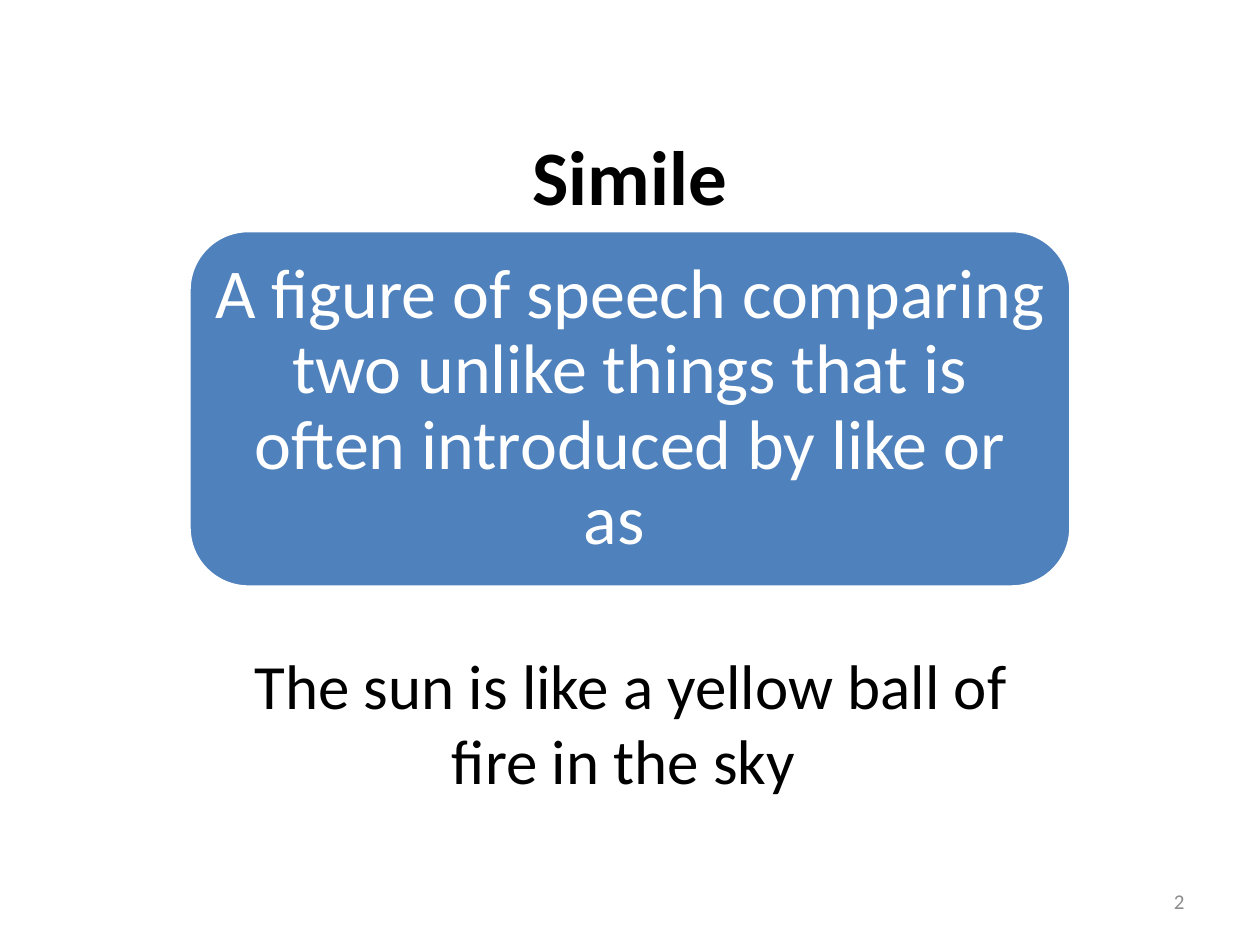
from pptx import Presentation
from pptx.dml.color import RGBColor
from pptx.enum.shapes import MSO_SHAPE
from pptx.enum.text import MSO_ANCHOR, PP_ALIGN
from pptx.util import Inches, Pt

ROUND = MSO_SHAPE.ROUNDED_RECTANGLE
TOP, MIDDLE = MSO_ANCHOR.TOP, MSO_ANCHOR.MIDDLE
CENTER, RIGHT = PP_ALIGN.CENTER, PP_ALIGN.RIGHT

THEME = {
    "font": "Calibri",
    "black": RGBColor(0x00, 0x00, 0x00),
    "white": RGBColor(0xFF, 0xFF, 0xFF),
    "blue": RGBColor(0x4F, 0x81, 0xBD),
    "gray": RGBColor(0x8C, 0x8C, 0x8C),
    "title": 44, "body": 40, "sample": 36, "number": 12,
}

CARD = (1.5, 1.83, 7, 2.83)
CARD_TEXT = ("A figure of speech comparing two unlike things "
             "that is often introduced by like or as\u00a0 ")
LABELS = [
    ("Simile", (0.75, 0.58, 8.5, 1.61), "title", "black", True, CENTER, MIDDLE),
    ("The sun is like a yellow ball of fire in the sky ",
     (1.67, 5.08, 6.67, 1.31), "sample", "black", False, CENTER, TOP),
    ("2", (7.17, 6.95, 2.33, 0.4), "number", "gray", False, RIGHT, MIDDLE),
]


def write(shape, text, size, color, bold, align, anchor):
    frame = shape.text_frame
    frame.word_wrap = True
    frame.vertical_anchor = anchor
    para = frame.paragraphs[0]
    para.alignment = align
    run = para.add_run()
    run.text = text
    font = run.font
    font.name = THEME["font"]
    font.size = Pt(THEME[size])
    font.bold = bold
    font.color.rgb = THEME[color]
    return frame


def add_label(slide, text, place, *style):
    box = slide.shapes.add_textbox(*map(Inches, place))
    write(box, text, *style)


def add_card(slide):
    card = slide.shapes.add_shape(ROUND, *map(Inches, CARD))
    card.shadow.inherit = False
    card.fill.solid()
    card.fill.fore_color.rgb = THEME["blue"]
    card.line.color.rgb = THEME["white"]
    card.line.width = Pt(2)
    frame = write(card, CARD_TEXT, "body", "white", False, CENTER, MIDDLE)
    frame.margin_left = frame.margin_right = Inches(0.03)
    frame.margin_top = frame.margin_bottom = Inches(0.03)
    frame.paragraphs[0].line_spacing = 0.9


def main():
    deck = Presentation()
    deck.slide_width, deck.slide_height = Inches(10), Inches(7.5)
    slide = deck.slides.add_slide(deck.slide_layouts[6])
    title, *rest = LABELS
    add_label(slide, *title)
    add_card(slide)
    for label in rest:
        add_label(slide, *label)
    deck.save("out.pptx")


if __name__ == "__main__":
    main()
